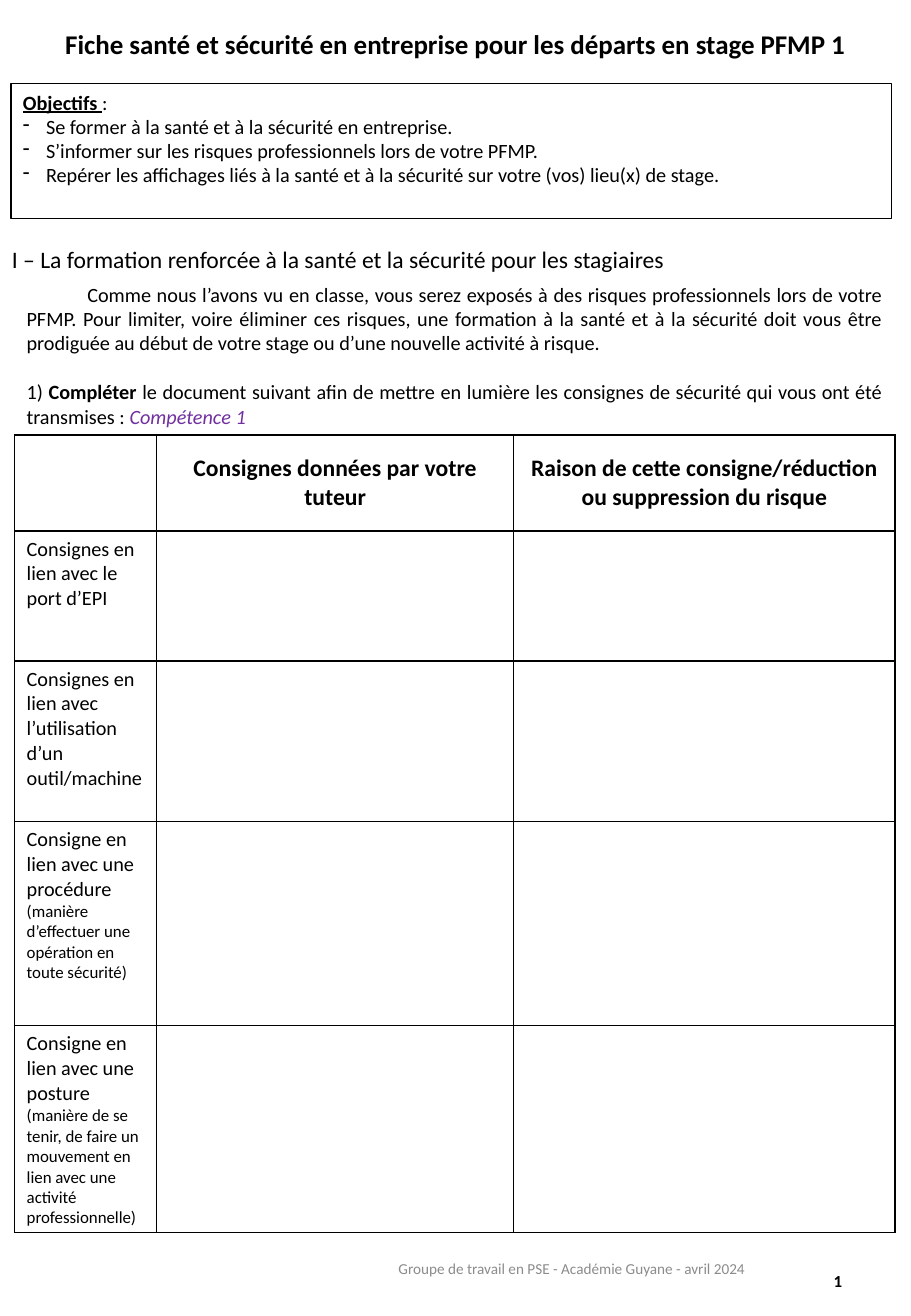
from lxml import etree
from pptx import Presentation
from pptx.dml.color import RGBColor
from pptx.enum.shapes import MSO_SHAPE
from pptx.enum.text import MSO_ANCHOR, PP_ALIGN
from pptx.oxml.ns import qn
from pptx.util import Inches, Pt

BLACK = RGBColor(0x00, 0x00, 0x00)
WHITE = RGBColor(0xFF, 0xFF, 0xFF)
PURPLE = RGBColor(0x70, 0x30, 0xA0)
GREY = RGBColor(0x8C, 0x8C, 0x8C)
FONT = "Calibri"
RECTANGLE = MSO_SHAPE.RECTANGLE
TOP, MIDDLE, BOTTOM = MSO_ANCHOR.TOP, MSO_ANCHOR.MIDDLE, MSO_ANCHOR.BOTTOM
LEFT, CENTER, RIGHT, JUSTIFY = (
    PP_ALIGN.LEFT, PP_ALIGN.CENTER, PP_ALIGN.RIGHT, PP_ALIGN.JUSTIFY)

TITLE = "Fiche santé et sécurité en entreprise pour les départs en stage PFMP 1"
OBJECTIVES = [
    "Se former à la santé et à la sécurité en entreprise.",
    "S’informer sur les risques professionnels lors de votre PFMP.",
    "Repérer les affichages liés à la santé et à la sécurité sur votre (vos) lieu(x) de stage.",
]
SECTION = "I – La formation renforcée à la santé et la sécurité pour les stagiaires"
INTRODUCTION = (
    "Comme nous l’avons vu en classe, vous serez exposés à des risques professionnels "
    "lors de votre PFMP. Pour limiter, voire éliminer ces risques, une formation à la santé "
    "et à la sécurité doit vous être prodiguée au début de votre stage ou d’une nouvelle "
    "activité à risque.")
TASK = ("le document suivant afin de mettre en lumière les consignes de sécurité "
        "qui vous ont été transmises : ")
HEADINGS = ["Consignes données par votre tuteur",
            "Raison de cette consigne/réduction ou suppression du risque"]
# Each row: instruction, then its explanation in small type
INSTRUCTIONS = [
    ("Consignes en lien avec le port d’EPI", ""),
    ("Consignes en lien avec l’utilisation d’un outil/machine", ""),
    ("Consigne en lien avec une procédure ",
     "(manière d’effectuer une opération en toute sécurité)"),
    ("Consigne en lien avec une posture",
     " (manière de se tenir, de faire un mouvement en lien avec une activité professionnelle)"),
]
COLUMN_WIDTHS = [1.17, 2.94, 3.14]
ROW_HEIGHTS = [0.79, 1.07, 1.32, 1.68, 1.58]


def write(paragraph, text, size=12, color=BLACK, bold=False, italic=False,
          underline=False, align=LEFT):
    """Append one formatted run to a paragraph."""
    paragraph.alignment = align
    run = paragraph.add_run()
    run.text = text
    font = run.font
    font.name, font.size, font.color.rgb = FONT, Pt(size), color
    font.bold, font.italic, font.underline = bold, italic, underline


def indent(paragraph, margin, first_line):
    properties = paragraph._p.get_or_add_pPr()
    properties.set("marL", str(Inches(margin)))
    properties.set("indent", str(Inches(first_line)))
    return properties


def add_text_frame(slide, box, anchor=TOP, wrap=True):
    frame = slide.shapes.add_textbox(*map(Inches, box)).text_frame
    frame.word_wrap = wrap
    frame.vertical_anchor = anchor
    return frame


def place_title(slide, box):
    title = slide.shapes.title
    title.left, title.top, title.width, title.height = map(Inches, box)
    title.text_frame.vertical_anchor = BOTTOM
    paragraph = title.text_frame.paragraphs[0]
    paragraph.line_spacing = 0.9
    write(paragraph, TITLE, size=16, bold=True, align=CENTER)


def add_objectives(slide, box):
    panel = slide.shapes.add_shape(RECTANGLE, *map(Inches, box))
    panel.shadow.inherit = False
    panel.fill.background()
    panel.line.color.rgb = BLACK
    panel.line.width = Pt(0.75)
    frame = panel.text_frame
    frame.word_wrap = True
    frame.vertical_anchor = TOP
    heading = frame.paragraphs[0]
    write(heading, "Objectifs ", bold=True, underline=True)
    write(heading, ":")
    for objective in OBJECTIVES:
        item = frame.add_paragraph()
        write(item, objective)
        properties = indent(item, 0.19, -0.19)
        etree.SubElement(properties, qn("a:buChar")).set("char", "-")


def add_training(slide, box):
    left, top, width, height = box
    # Section heading
    heading = add_text_frame(slide, (0, top, 5.63, 0.34), wrap=False)
    write(heading.paragraphs[0], SECTION, size=14)
    # Introduction and task
    body = add_text_frame(slide, (left, top + 0.3, width, height - 0.3))
    introduction = body.paragraphs[0]
    write(introduction, INTRODUCTION, align=JUSTIFY)
    indent(introduction, 0, 0.5)
    task = body.add_paragraph()
    task.space_before = Pt(14.65)
    write(task, "1) ", align=JUSTIFY)
    write(task, "Compléter ", bold=True, align=JUSTIFY)
    write(task, TASK, align=JUSTIFY)
    write(task, "Compétence 1", color=PURPLE, italic=True, align=JUSTIFY)


def format_cell(cell):
    """Black border on every side, white fill."""
    properties = cell._tc.get_or_add_tcPr()
    for side in ("lnL", "lnR", "lnT", "lnB"):
        border = etree.SubElement(properties, qn(f"a:{side}"), w=str(Pt(1)))
        paint = etree.SubElement(border, qn("a:solidFill"))
        etree.SubElement(paint, qn("a:srgbClr"), val=str(BLACK))
    cell.fill.solid()
    cell.fill.fore_color.rgb = WHITE


def add_instruction_table(slide, box):
    table = slide.shapes.add_table(
        len(ROW_HEIGHTS), len(COLUMN_WIDTHS), *map(Inches, box)).table
    table.first_row = table.horz_banding = False
    for column, width in zip(table.columns, COLUMN_WIDTHS):
        column.width = Inches(width)
    for row, height in zip(table.rows, ROW_HEIGHTS):
        row.height = Inches(height)
    for cell in table.iter_cells():
        format_cell(cell)
    # Column headings
    for column, heading in enumerate(HEADINGS, 1):
        cell = table.cell(0, column)
        cell.vertical_anchor = MIDDLE
        write(cell.text_frame.paragraphs[0], heading, size=14, bold=True, align=CENTER)
    # Row labels
    for row, (instruction, explanation) in enumerate(INSTRUCTIONS, 1):
        label = table.cell(row, 0).text_frame.paragraphs[0]
        write(label, instruction)
        if explanation:
            write(label, explanation, size=10)


def add_footer(slide, box):
    left, top, width, height = box
    credit = add_text_frame(slide, (left, top, 3.81, height), MIDDLE)
    write(credit.paragraphs[0], "Groupe de travail en PSE - Académie Guyane - avril 2024",
          size=9, color=GREY, align=CENTER)
    number = add_text_frame(slide, (left + width - 1.69, top + 0.1, 1.69, height), MIDDLE)
    write(number.paragraphs[0], "1", size=10, bold=True, align=RIGHT)


def main():
    presentation = Presentation()
    presentation.slide_width = Inches(7.5)
    presentation.slide_height = Inches(10.83)
    slide = presentation.slides.add_slide(presentation.slide_layouts[5])
    place_title(slide, (0, -0.01, 7.5, 0.56))
    add_objectives(slide, (0.09, 0.69, 7.25, 1.11))
    add_training(slide, (0.12, 1.97, 7.25, 1.61))
    add_instruction_table(slide, (0.12, 3.58, sum(COLUMN_WIDTHS), sum(ROW_HEIGHTS)))
    add_footer(slide, (2.8, 10.15, 4.23, 0.58))
    presentation.save("out.pptx")


if __name__ == "__main__":
    main()
